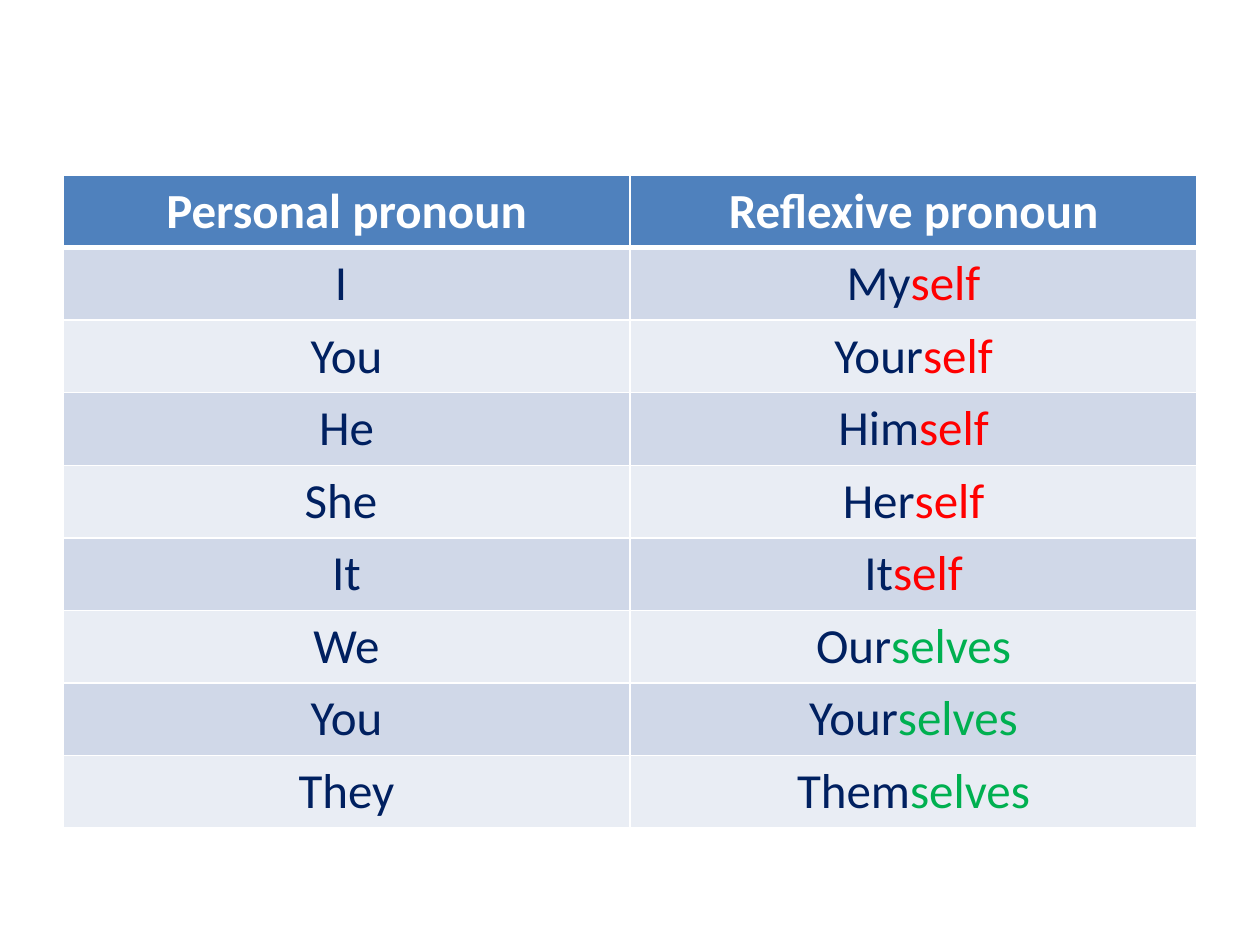
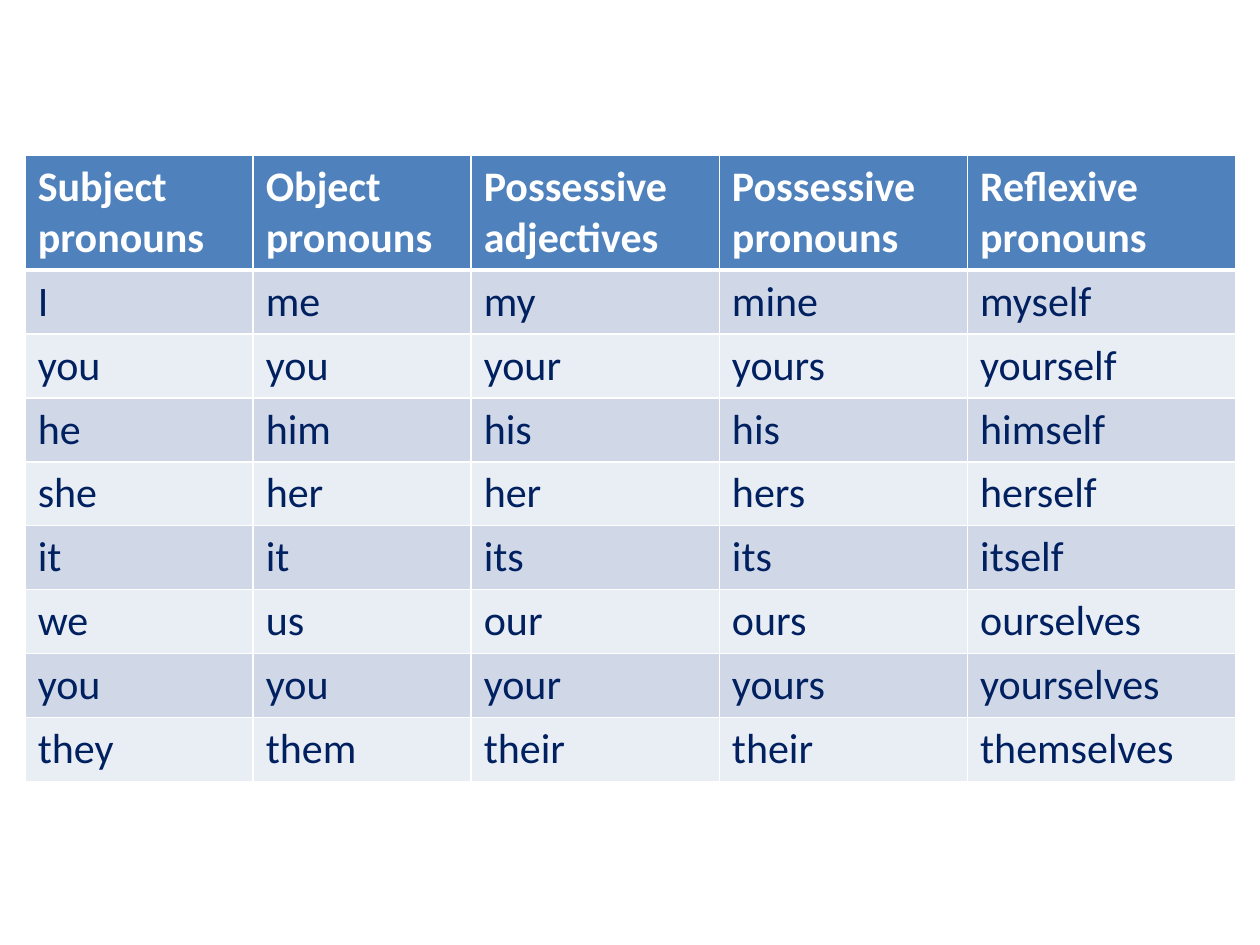
from dataclasses import dataclass
from typing import NamedTuple

from lxml import etree
from pptx import Presentation
from pptx.dml.color import RGBColor
from pptx.enum.text import PP_ALIGN
from pptx.oxml.ns import qn
from pptx.util import Inches, Pt

LEFT, CENTER = PP_ALIGN.LEFT, PP_ALIGN.CENTER
BLANK_LAYOUT = 6
FONT = "Calibri"
COLORS = {
    "header": "4F81BD",
    "band_dark": "D0D8E8",
    "band_light": "E9EDF4",
    "white": "FFFFFF",
    "navy": "002060",
    "singular": "FF0000",
    "plural": "00B050",
}
THIN, THICK = 1, 3  # border widths in points


class Run(NamedTuple):
    text: str
    color: str = "navy"


Paragraph = list[Run]
Cell = list[Paragraph]


@dataclass
class PronounTable:
    left: float
    top: float
    column_widths: list[float]
    header_height: float
    row_height: float
    font_size: int
    align: PP_ALIGN
    headers: list[str]
    rows: list[list[Cell]]


def plain(text: str, color: str = "navy") -> Cell:
    """One paragraph for each line of the text."""
    return [[Run(line, color)] for line in text.split("\n")]


def reflexive(stem: str, ending: str) -> Cell:
    """A pronoun whose ending is coloured by number."""
    return [[Run(stem), Run(ending, "singular" if ending == "self" else "plural")]]


def write_text(text_frame, paragraphs: Cell, *, size: int, align: PP_ALIGN,
               bold: bool = False) -> None:
    for index, runs in enumerate(paragraphs):
        paragraph = text_frame.add_paragraph() if index else text_frame.paragraphs[0]
        paragraph.alignment = align
        for part in runs:
            run = paragraph.add_run()
            run.text = part.text
            run.font.name = FONT
            run.font.size = Pt(size)
            run.font.bold = bold
            run.font.color.rgb = RGBColor.from_string(COLORS[part.color])


def set_borders(cell, top: int, bottom: int) -> None:
    properties = cell._tc.get_or_add_tcPr()
    for side, width in (("L", THIN), ("R", THIN), ("T", top), ("B", bottom)):
        line = etree.SubElement(properties, qn(f"a:ln{side}"), w=str(Pt(width)))
        fill = etree.SubElement(line, qn("a:solidFill"))
        etree.SubElement(fill, qn("a:srgbClr"), val=COLORS["white"])


def fill_name(row_index: int) -> str:
    if row_index == 0:
        return "header"
    return "band_dark" if row_index % 2 else "band_light"


def add_pronoun_table(slide, design: PronounTable) -> None:
    content = [[plain(header, "white") for header in design.headers], *design.rows]
    heights = [design.header_height] + [design.row_height] * len(design.rows)
    table = slide.shapes.add_table(
        len(content), len(design.headers), Inches(design.left), Inches(design.top),
        Inches(sum(design.column_widths)), Inches(sum(heights))).table
    table.horz_banding = False
    for column, width in zip(table.columns, design.column_widths):
        column.width = Inches(width)

    for row_index, (row, height) in enumerate(zip(table.rows, heights)):
        row.height = Inches(height)
        is_header = row_index == 0
        for cell, paragraphs in zip(row.cells, content[row_index]):
            set_borders(cell, top=THICK if row_index == 1 else THIN,
                        bottom=THICK if is_header else THIN)
            cell.fill.solid()
            cell.fill.fore_color.rgb = RGBColor.from_string(COLORS[fill_name(row_index)])
            write_text(cell.text_frame, paragraphs, size=design.font_size,
                       align=design.align, bold=is_header)


# Slide 1: personal and reflexive pronouns
REFLEXIVE_FORMS = [
    ("I ", "My", "self"),
    ("You", "Your", "self"),
    ("He", "Him", "self"),
    ("She ", "Her", "self"),
    ("It", "It", "self"),
    ("We", "Our", "selves"),
    ("You", "Your", "selves"),
    ("They", "Them", "selves"),
]
REFLEXIVE_TABLE = PronounTable(
    left=0.5, top=1.39, column_widths=[4.5, 4.5],
    header_height=0.57, row_height=0.57, font_size=28, align=CENTER,
    headers=["Personal pronoun", "Reflexive pronoun"],
    rows=[[plain(personal), reflexive(stem, ending)]
          for personal, stem, ending in REFLEXIVE_FORMS],
)

# Slide 2: overview of all pronoun forms
ALL_FORMS = [
    "I me my mine myself",
    "you you your yours yourself",
    "he him his his himself",
    "she her her hers herself",
    "it it its its itself",
    "we us our ours ourselves",
    "you you your yours yourselves",
    "they them their their themselves",
]
OVERVIEW_TABLE = PronounTable(
    left=0.2, top=1.23, column_widths=[1.81, 1.73, 1.97, 1.97, 2.13],
    header_height=0.9, row_height=0.5, font_size=24, align=LEFT,
    headers=["Subject\npronouns", "Object\npronouns", "Possessive\nadjectives",
             "Possessive\npronouns", "Reflexive\npronouns"],
    rows=[[plain(word) for word in forms.split()] for forms in ALL_FORMS],
)


def main() -> None:
    presentation = Presentation()
    presentation.slide_width, presentation.slide_height = Inches(10), Inches(7.5)
    for design in (REFLEXIVE_TABLE, OVERVIEW_TABLE):
        slide = presentation.slides.add_slide(presentation.slide_layouts[BLANK_LAYOUT])
        add_pronoun_table(slide, design)
    presentation.save("out.pptx")


if __name__ == "__main__":
    main()
